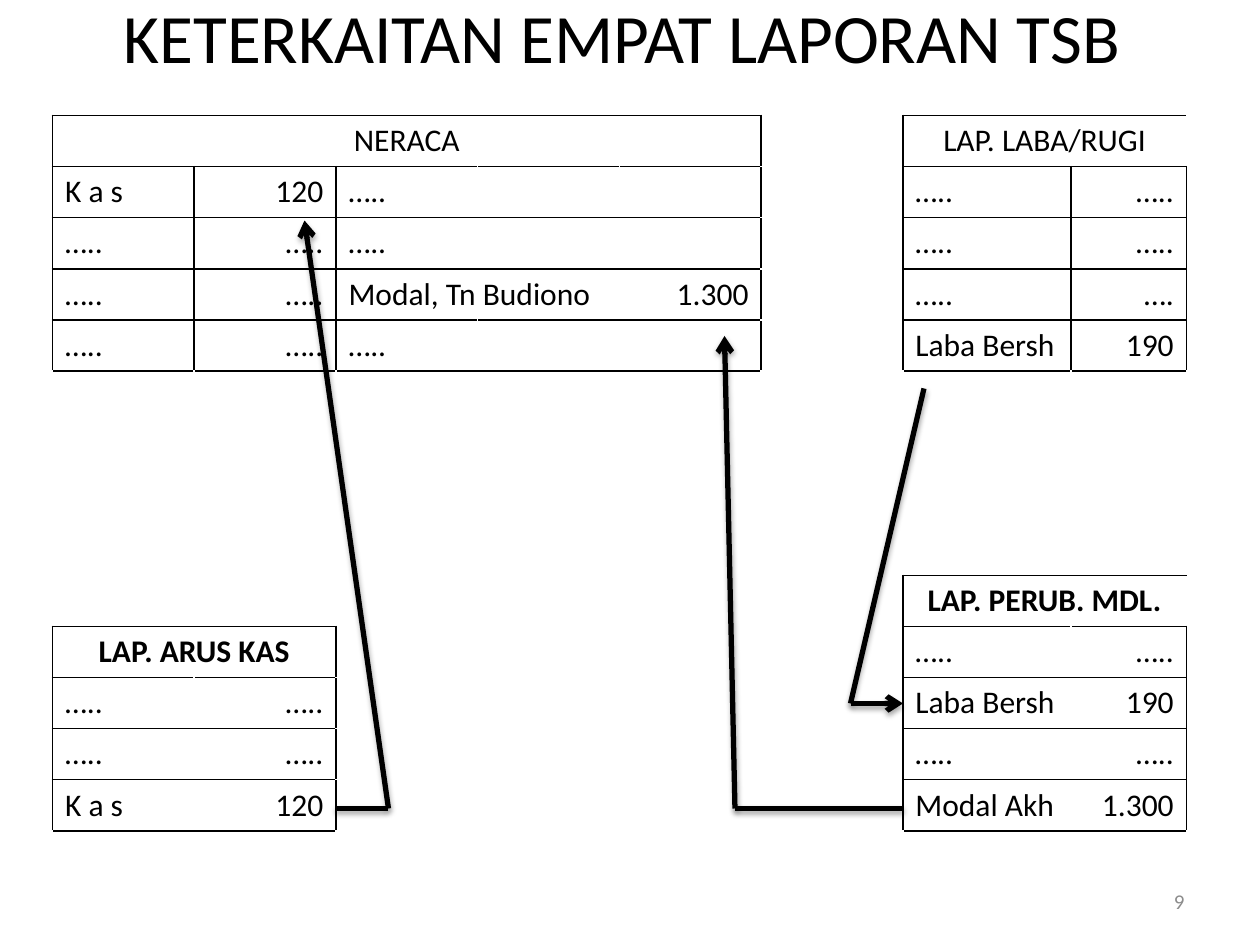
"""Builds a slide that links four financial reports with arrows."""
from dataclasses import dataclass

from lxml import etree
from pptx import Presentation
from pptx import util as u
from pptx.dml.color import RGBColor
from pptx.enum import shapes, text
from pptx.oxml.ns import qn

FONT, BLACK, WHITE = "Calibri", "000000", "FFFFFF"
LEFT, MID, RIGHT = text.PP_ALIGN.LEFT, text.PP_ALIGN.CENTER, text.PP_ALIGN.RIGHT
DOTS = "….."
COLS = [13.5] * 6 + [16, 11]
ROWS = 15


@dataclass
class Report:
    name: str
    row: int
    col: int
    rules: tuple
    lines: list
    bold: bool = False


@dataclass
class Link:
    start: tuple
    end: tuple
    arrow: bool = False


REPORTS = [
    Report("NERACA", 0, 0, (0, 1, 2, 5), [
        ("K a s", "120", DOTS, "", ""),
        (DOTS, DOTS, DOTS, "", ""),
        (DOTS, DOTS, "Modal, Tn Budiono", "", "1.300"),
        (DOTS, DOTS, DOTS, "", ""),
    ]),
    Report("LAP. LABA/RUGI", 0, 6, (0, 1, 2), [
        (DOTS, DOTS), (DOTS, DOTS), (DOTS, "…."), ("Laba Bersh", "190"),
    ]),
    Report("LAP. PERUB. MDL.", 9, 6, (0, 2), [
        (DOTS, DOTS), ("Laba Bersh", "190"), (DOTS, DOTS), ("Modal Akh", "1.300"),
    ], True),
    Report("LAP. ARUS KAS", 10, 0, (0, 2), [
        (DOTS, DOTS), (DOTS, DOTS), ("K a s", "120"),
    ], True),
]
LINKS = [
    Link((32, 77), (37, 77)),
    Link((37, 77), (29, 21), True),
    Link((86, 77), (70, 77)),
    Link((70, 77), (69, 32), True),
    Link((81, 67), (86, 67), True),
    Link((81, 67), (88, 37)),
]


def grid(n: float) -> int:
    """Turn grid steps, 120 across and 90 down the slide, into a length."""
    return u.Inches(n / 12)


def tint(code: str) -> RGBColor:
    """Turn a hex string into a colour."""
    return RGBColor.from_string(code)


def write(frame, words: str, size: float, align, hue: str = BLACK, bold: bool = False) -> None:
    """Put one formatted paragraph into a text frame."""
    frame.text = words
    para = frame.paragraphs[0]
    para.alignment = align
    for run in para.runs:
        font = run.font
        font.name, font.size, font.bold = FONT, u.Pt(size), bold
        font.color.rgb = tint(hue)


def place(shape, left: float, top: float, wide: float, high: float) -> None:
    """Move and size a shape on the grid."""
    shape.left, shape.top, shape.width, shape.height = map(grid, (left, top, wide, high))


def edges(rep: Report) -> set:
    """List the black edges of a report as (kind, row, column)."""
    last = rep.rules[-1]
    found = set()
    for step in range(len(rep.lines) + 2):
        found |= {("h", rep.row + step, rep.col + c) for c in range(last)}
    for step in range(len(rep.lines) + 1):
        rules = rep.rules if step else (0, last)
        found |= {("v", rep.row + step, rep.col + c) for c in rules}
    return found


def border(cell, sides: list) -> None:
    """Draw the left, right, top and bottom borders of a cell."""
    props = cell._tc.get_or_add_tcPr()
    for spot, (tag, dark) in enumerate(zip(("lnL", "lnR", "lnT", "lnB"), sides)):
        line = etree.Element(qn("a:" + tag), w=str(u.Pt(1)))
        fill = etree.SubElement(line, qn("a:solidFill"))
        etree.SubElement(fill, qn("a:srgbClr"), val=BLACK if dark else WHITE)
        props.insert(spot, line)


def fill_in(table, rep: Report) -> None:
    """Write the heading and lines of a report into the table."""
    last = rep.rules[-1]
    head = table.cell(rep.row, rep.col)
    head.merge(table.cell(rep.row, rep.col + last - 1))
    write(head.text_frame, rep.name, 18, MID, bold=rep.bold)
    for r, line in enumerate(rep.lines, rep.row + 1):
        for c, words in enumerate(line):
            if words:
                align = RIGHT if c in (1, last - 1) else LEFT
                write(table.cell(r, rep.col + c).text_frame, words, 18, align)


def add_grid(slide) -> None:
    """Add the table that holds all reports."""
    size = map(grid, (5, 11, 108, 73))
    table = slide.shapes.add_table(ROWS, len(COLS), *size).table
    table.first_row = table.horz_banding = False
    for col, wide in zip(table.columns, COLS):
        col.width = grid(wide)
    dark = set().union(*map(edges, REPORTS))
    for r in range(ROWS):
        for c in range(len(COLS)):
            cell = table.cell(r, c)
            cell.fill.solid()
            cell.fill.fore_color.rgb = tint(WHITE)
            keys = ("v", r, c), ("v", r, c + 1), ("h", r, c), ("h", r + 1, c)
            border(cell, [key in dark for key in keys])
    for rep in REPORTS:
        fill_in(table, rep)
    table.cell(3, 2).merge(table.cell(3, 3))


def add_link(slide, link: Link) -> None:
    """Draw one thick line with a soft shadow and perhaps an arrowhead."""
    ends = map(grid, link.start + link.end)
    line = slide.shapes.add_connector(shapes.MSO_CONNECTOR.STRAIGHT, *ends)
    line.line.width = u.Pt(3)
    line.line.color.rgb = tint(BLACK)
    if link.arrow:
        etree.SubElement(line.line._get_or_add_ln(), qn("a:tailEnd"), type="arrow")
    effect = etree.SubElement(line._element.spPr, qn("a:effectLst"))
    shade = etree.SubElement(effect, qn("a:outerShdw"), blurRad=str(u.Pt(3.1)),
                             dist=str(u.Pt(1.8)), dir="5400000", rotWithShape="0")
    hue = etree.SubElement(shade, qn("a:srgbClr"), val=BLACK)
    etree.SubElement(hue, qn("a:alpha"), val="35000")


def main() -> None:
    """Build and save the slide."""
    deck = Presentation()
    deck.slide_width, deck.slide_height = grid(120), grid(90)
    slide = deck.slides.add_slide(deck.slide_layouts[5])
    title = slide.shapes.title
    place(title, 6, 3.6, 108, 8.4)
    frame = title.text_frame
    write(frame, "KETERKAITAN EMPAT LAPORAN TSB \v", 39.6, MID)
    frame.auto_size = text.MSO_AUTO_SIZE.NONE
    frame.vertical_anchor = text.MSO_ANCHOR.MIDDLE
    add_grid(slide)
    for link in LINKS:
        add_link(slide, link)
    page = slide.shapes.add_textbox(0, 0, 0, 0)
    place(page, 86, 83.4, 28, 4.8)
    page.text_frame.word_wrap = True
    page.text_frame.vertical_anchor = text.MSO_ANCHOR.MIDDLE
    write(page.text_frame, "9", 12, RIGHT, "8C8C8C")
    deck.save("out.pptx")


if __name__ == "__main__":
    main()
